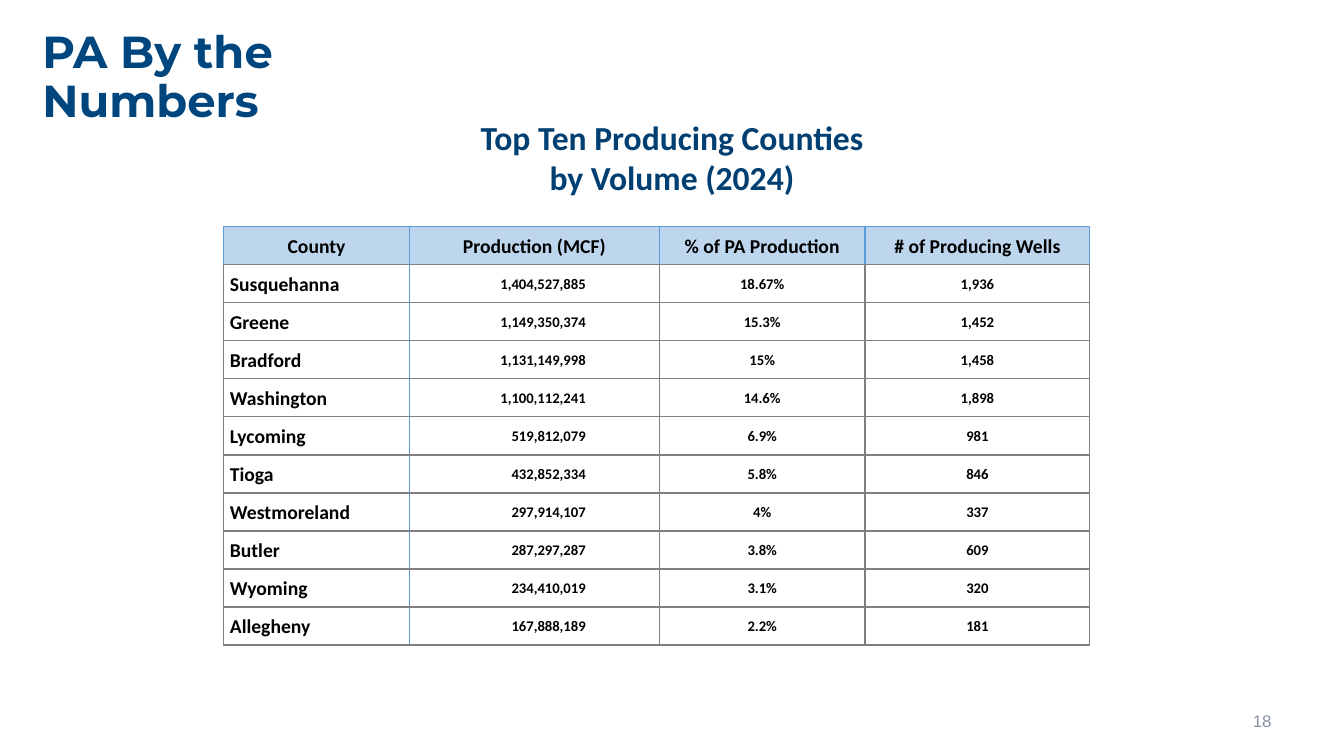
from lxml import etree
from pptx import Presentation
from pptx.dml.color import RGBColor
from pptx.enum.text import MSO_ANCHOR as Anchor, MSO_AUTO_SIZE as AutoSize, PP_ALIGN as Align
from pptx.oxml.ns import qn
from pptx.util import Inches, Pt

TITLE = "PA By the Numbers"
SUBTITLE = ["Top Ten Producing Counties", "by Volume (2024)"]
PAGE_NUMBER = "18"
HEADERS = ("County", "Production (MCF)", "% of PA Production", "# of Producing Wells")
COUNTIES = [
    ("Susquehanna", "1,404,527,885", "18.67%", "1,936"),
    ("Greene", "1,149,350,374", "15.3%", "1,452"),
    ("Bradford", "1,131,149,998", "15%", "1,458"),
    ("Washington", "1,100,112,241", "14.6%", "1,898"),
    ("Lycoming", "519,812,079", "6.9%", "981"),
    ("Tioga", "432,852,334", "5.8%", "846"),
    ("Westmoreland", "297,914,107", "4%", "337"),
    ("Butler", "287,297,287", "3.8%", "609"),
    ("Wyoming", "234,410,019", "3.1%", "320"),
    ("Allegheny", "167,888,189", "2.2%", "181"),
]
COLUMN_WIDTHS = (1.84, 2.48, 2.04, 2.23)
COLUMN_ALIGNS = (Align.LEFT, Align.RIGHT, Align.CENTER, Align.CENTER)
COLUMN_MARGINS = ((0.06, 0.06), (0.01, 0.73), (0.01, 0.01), (0, 0))
TABLE_HEIGHT = 4.15

TITLE_BLUE = RGBColor(0x00, 0x46, 0x7E)
SUBTITLE_BLUE = RGBColor(0x00, 0x3F, 0x72)
HEADER_FILL = RGBColor(0xBD, 0xD6, 0xEE)
BORDER_BLUE = RGBColor(0x5B, 0x9B, 0xD5)
BORDER_GRAY = RGBColor(0x80, 0x80, 0x80)
PAGE_GRAY = RGBColor(0x89, 0x92, 0xA5)
BLACK = RGBColor(0, 0, 0)


def write_text(frame, *lines, size, color, font="Calibri", bold=True,
               align=Align.LEFT, anchor=Anchor.TOP, spacing=1.0):
    frame.word_wrap = True
    frame.vertical_anchor = anchor
    for index, line in enumerate(lines):
        paragraph = frame.paragraphs[0] if index == 0 else frame.add_paragraph()
        paragraph.alignment = align
        paragraph.line_spacing = spacing
        run = paragraph.add_run()
        run.text = line
        run.font.name = font
        run.font.size = Pt(size)
        run.font.bold = bold
        run.font.color.rgb = color


def set_borders(cell, **colors):
    """Draw one-point cell borders; sides come in the order L, R, T, B."""
    properties = cell._tc.get_or_add_tcPr()
    for side, color in colors.items():
        line = etree.SubElement(properties, qn(f"a:ln{side}"), w=str(Pt(1)))
        fill = etree.SubElement(line, qn("a:solidFill"))
        etree.SubElement(fill, qn("a:srgbClr"), val=str(color))


def add_county_table(slide):
    rows = [HEADERS, *COUNTIES]
    frame = slide.shapes.add_table(
        len(rows), len(HEADERS), Inches(2.22), Inches(2.25),
        Inches(sum(COLUMN_WIDTHS)), Inches(TABLE_HEIGHT))
    table = frame.table
    table.horz_banding = False
    for column, width in zip(table.columns, COLUMN_WIDTHS):
        column.width = Inches(width)
    for row_index, values in enumerate(rows):
        table.rows[row_index].height = Inches(TABLE_HEIGHT / len(rows))
        is_header = row_index == 0
        for column_index, value in enumerate(values):
            cell = table.cell(row_index, column_index)
            left, right = (0.06, 0.06) if is_header else COLUMN_MARGINS[column_index]
            cell.margin_left, cell.margin_right = Inches(left), Inches(right)
            cell.margin_top, cell.margin_bottom = Inches(0.01), 0
            cell.vertical_anchor = Anchor.MIDDLE
            set_borders(
                cell,
                L=BORDER_BLUE if is_header or column_index == 1 else BORDER_GRAY,
                R=BORDER_BLUE if is_header or column_index == 0 else BORDER_GRAY,
                T=BORDER_BLUE if is_header else BORDER_GRAY,
                B=BORDER_GRAY)
            if is_header:
                cell.fill.solid()
                cell.fill.fore_color.rgb = HEADER_FILL
            else:
                cell.fill.background()
            write_text(cell.text_frame, value, color=BLACK, anchor=Anchor.MIDDLE,
                       size=14 if is_header or column_index == 0 else 10.5,
                       align=Align.CENTER if is_header else COLUMN_ALIGNS[column_index])


def main():
    presentation = Presentation()
    presentation.slide_width, presentation.slide_height = Inches(13.33), Inches(7.5)
    slide = presentation.slides.add_slide(presentation.slide_layouts[5])

    title = slide.shapes.title
    title.left, title.top = Inches(0.32), Inches(0.25)
    title.width, title.height = Inches(3.8), Inches(0.49)
    title.text_frame.auto_size = AutoSize.NONE
    write_text(title.text_frame, TITLE, size=32, color=TITLE_BLUE,
               font="Montserrat", spacing=0.9)

    page = slide.shapes.add_textbox(Inches(9.71), Inches(6.95), Inches(3), Inches(0.4))
    write_text(page.text_frame, PAGE_NUMBER, size=12, color=PAGE_GRAY, font="Arial",
               bold=False, align=Align.RIGHT, anchor=Anchor.MIDDLE)

    subtitle = slide.shapes.add_textbox(Inches(4.3), Inches(1.11), Inches(4.73), Inches(0.91))
    write_text(subtitle.text_frame, *SUBTITLE, size=24, color=SUBTITLE_BLUE,
               align=Align.CENTER)

    add_county_table(slide)
    presentation.save("out.pptx")


if __name__ == "__main__":
    main()
